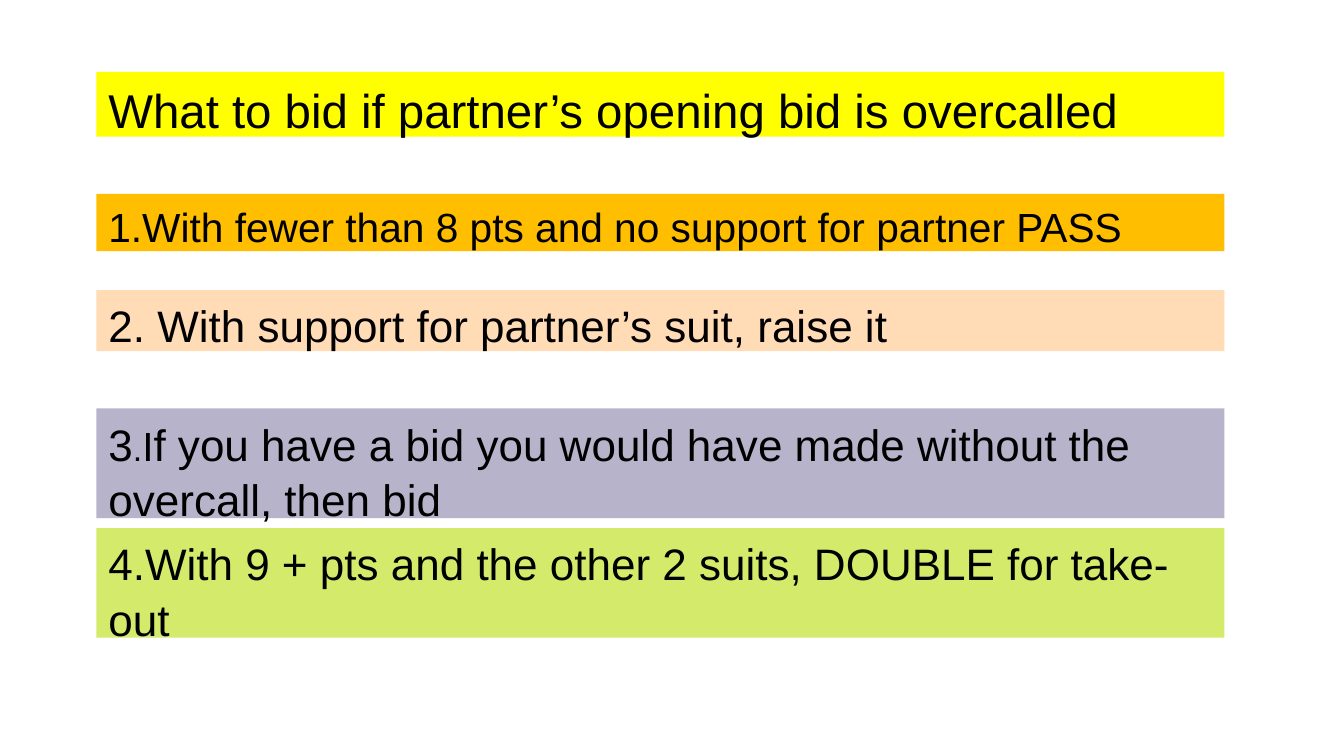
from pptx import Presentation
from pptx.dml.color import RGBColor
from pptx.enum import shapes, text
from pptx.util import Pt

BLACK = RGBColor(0x00, 0x00, 0x00)
YELLOW = RGBColor(0xFF, 0xFF, 0x00)
AMBER = RGBColor(0xFF, 0xBF, 0x00)
PEACH = RGBColor(0xFF, 0xDB, 0xB6)
LILAC = RGBColor(0xB7, 0xB3, 0xCA)
LIME = RGBColor(0xD4, 0xEA, 0x6B)

LEFT, WIDTH = 56.9, 666

# Top, height, fill, text size, runs (wording, own size if it differs)
TITLE = (42.5, 38.2, YELLOW, 28,
         [("What to bid if partner’s opening bid is overcalled", None)])
RULES = [
    (114.5, 33.8, AMBER, 24,
     [("1.With fewer than 8 pts and no support for partner PASS", None)]),
    (171.4, 36, PEACH, 26,
     [("2. With support for partner’s suit, raise it", None)]),
    (241.2, 64.8, LILAC, 26,
     [("3", None), (".", 20), ("I", 24),
      ("f you have a bid you would have made without the overcall, then bid",
       None)]),
    (311.8, 64.8, LIME, 26,
     [("4.With 9 + pts and the other 2 suits, DOUBLE for take-out", None)]),
]


def add_band(slide, left, width, band):
    """Filled bar with one left-aligned paragraph."""
    top, height, fill, size, runs = band
    bar = slide.shapes.add_shape(shapes.MSO_SHAPE.RECTANGLE, Pt(left), Pt(top),
                                 Pt(width), Pt(height))
    bar.shadow.inherit = False
    bar.fill.solid()
    bar.fill.fore_color.rgb = fill
    bar.line.fill.background()

    frame = bar.text_frame
    frame.word_wrap = True
    frame.vertical_anchor = text.MSO_ANCHOR.TOP
    para = frame.paragraphs[0]
    para.alignment = text.PP_ALIGN.LEFT
    para.line_spacing = 1.05
    para.font.name = "Arial"
    para.font.size = Pt(size)
    para.font.color.rgb = BLACK
    for words, own in runs:
        run = para.add_run()
        run.text = words
        if own:
            run.font.size = Pt(own)


def add_rules(slide, left, width):
    """Title bar followed by the numbered bidding rules."""
    for band in [TITLE, *RULES]:
        add_band(slide, left, width, band)


def main():
    deck = Presentation()
    deck.slide_width, deck.slide_height = Pt(793.44), Pt(446.4)
    slide = deck.slides.add_slide(deck.slide_layouts[6])
    add_rules(slide, LEFT, WIDTH)
    deck.save("out.pptx")


if __name__ == "__main__":
    main()
